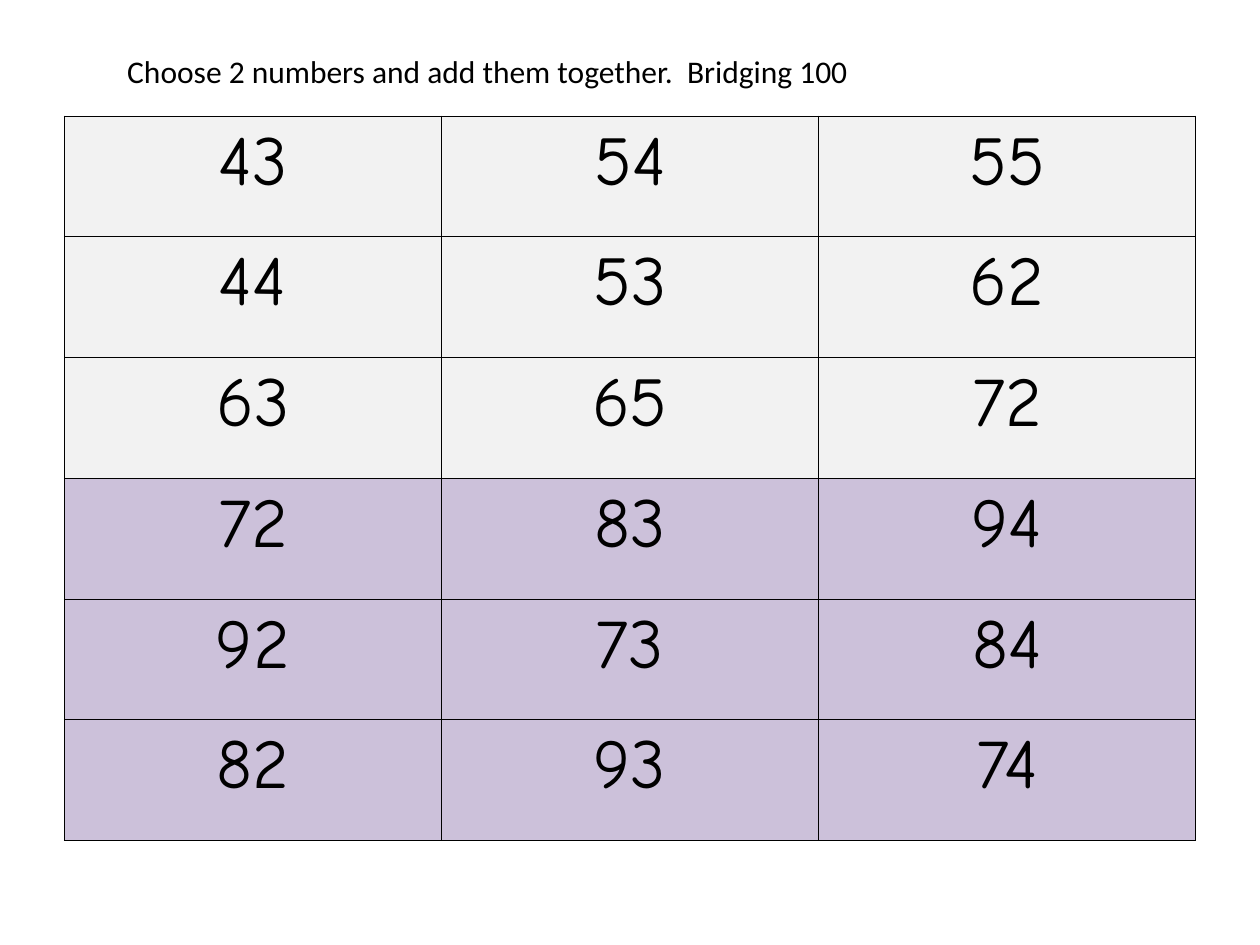
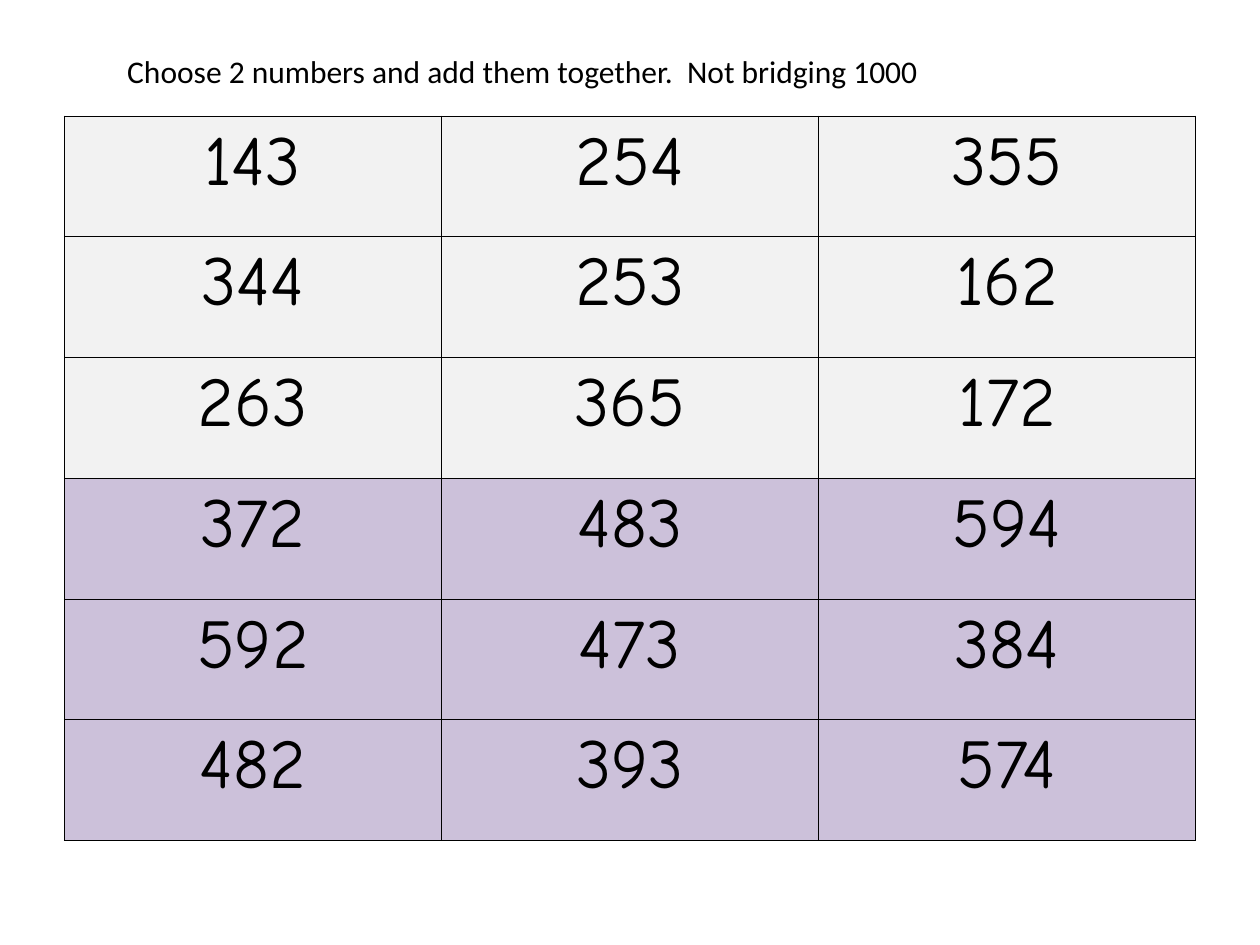
"""Build two number-choosing grids for addition practice."""
from dataclasses import dataclass

from lxml import etree
from pptx import Presentation
from pptx.dml.color import RGBColor
from pptx.enum import text as t
from pptx.oxml import ns
from pptx.util import Inches, Pt

BLACK = RGBColor(0x00, 0x00, 0x00)
GREY = RGBColor(0xF2, 0xF2, 0xF2)
LILAC = RGBColor(0xCC, 0xC1, 0xDA)
HEADING_FONT, NUMBER_FONT = "Calibri", "Comic Neue"
ROW_FILLS = [GREY] * 3 + [LILAC] * 3
BORDER = Pt(0.5)


@dataclass(frozen=True)
class NumberGrid:
    heading: str
    heading_width: float
    rows: tuple[str, ...]


GRIDS = (
    NumberGrid(
        "Choose 2 numbers and add them together.  Bridging 100",
        6.05,
        ("43 54 55", "44 53 62", "63 65 72", "72 83 94", "92 73 84", "82 93 74"),
    ),
    NumberGrid(
        "Choose 2 numbers and add them together.  Not bridging 1000",
        6.56,
        ("143 254 355", "344 253 162", "263 365 172",
         "372 483 594", "592 473 384", "482 393 574"),
    ),
)


def write(tf, content: str, *, font: str, size: float,
          align=t.PP_ALIGN.LEFT, color: RGBColor = BLACK) -> None:
    p = tf.paragraphs[0]
    p.alignment = align
    r = p.add_run()
    r.text = content
    r.font.name, r.font.size = font, Pt(size)
    r.font.color.rgb = color


def add_borders(cell) -> None:
    tc_pr = cell._tc.get_or_add_tcPr()
    for side in ("a:lnL", "a:lnR", "a:lnT", "a:lnB"):
        ln = etree.SubElement(tc_pr, ns.qn(side), w=str(BORDER))
        fill = etree.SubElement(ln, ns.qn("a:solidFill"))
        etree.SubElement(fill, ns.qn("a:srgbClr"), val=str(BLACK))


def add_heading(s, grid: NumberGrid) -> None:
    sp = s.shapes.title
    sp.left, sp.top = Inches(0.91), Inches(0.36)
    sp.width, sp.height = Inches(grid.heading_width), Inches(0.4)
    tf = sp.text_frame
    tf.word_wrap = True
    tf.auto_size = t.MSO_AUTO_SIZE.NONE
    tf.vertical_anchor = t.MSO_ANCHOR.TOP
    write(tf, grid.heading, font=HEADING_FONT, size=18)


def add_number_table(s, grid: NumberGrid) -> None:
    numbers = [row.split() for row in grid.rows]
    table = s.shapes.add_table(
        len(numbers), len(numbers[0]),
        Inches(0.51), Inches(0.92), Inches(8.98), Inches(5.75),
    ).table
    table.first_row = table.horz_banding = False
    for i, (row, fill) in enumerate(zip(numbers, ROW_FILLS)):
        for j, number in enumerate(row):
            cell = table.cell(i, j)
            add_borders(cell)
            cell.fill.solid()
            cell.fill.fore_color.rgb = fill
            write(cell.text_frame, number, font=NUMBER_FONT, size=40,
                  align=t.PP_ALIGN.CENTER)


def main() -> None:
    prs = Presentation()
    prs.slide_width, prs.slide_height = Inches(10), Inches(7.5)
    title_only = prs.slide_layouts.get_by_name("Title Only")
    for grid in GRIDS:
        s = prs.slides.add_slide(title_only)
        add_heading(s, grid)
        add_number_table(s, grid)
    prs.save("out.pptx")


if __name__ == "__main__":
    main()
